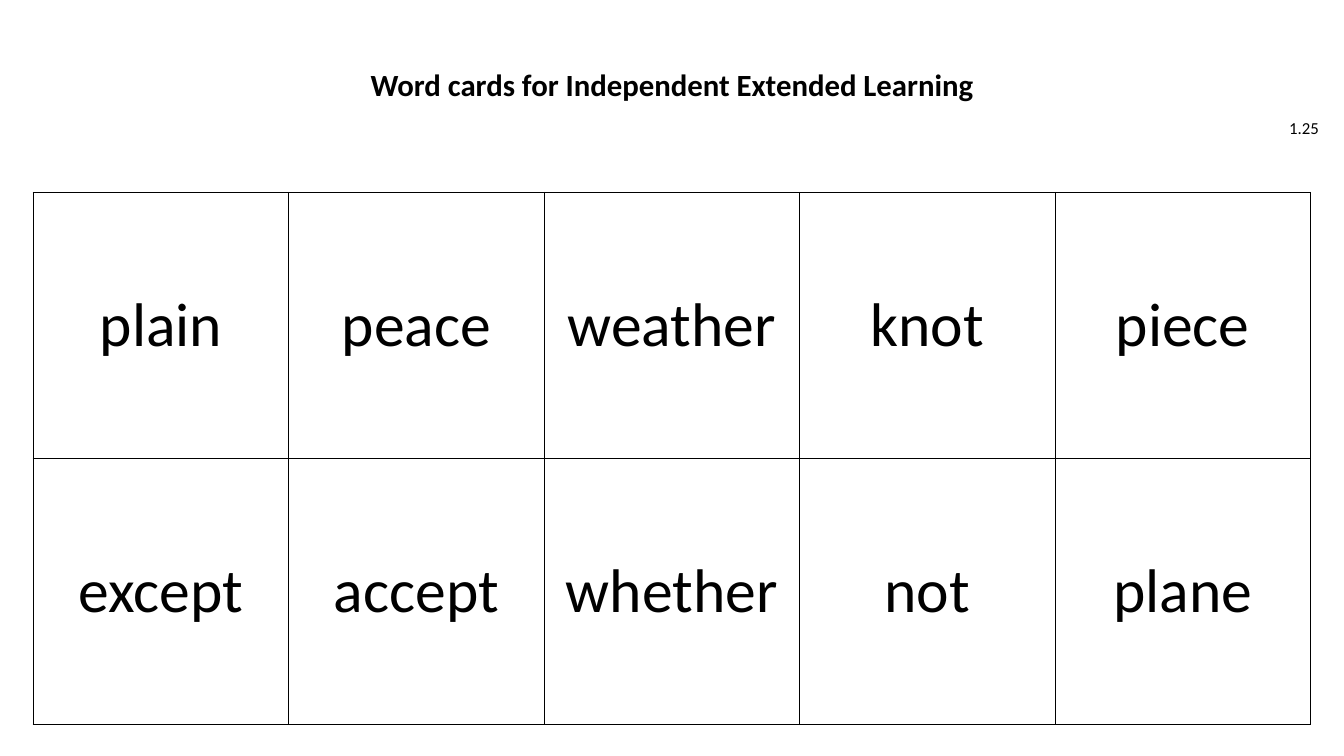
"""Build a slide of word cards for independent extended learning."""
import dataclasses

import lxml.etree
import pptx
import pptx.dml.color
import pptx.enum.text
import pptx.oxml.ns
import pptx.util

Inches = pptx.util.Inches
ALIGN = pptx.enum.text.PP_ALIGN
ANCHOR = pptx.enum.text.MSO_ANCHOR


@dataclasses.dataclass(frozen=True)
class Theme:
    font: str = "Calibri"
    ink: str = "000000"
    paper: str = "FFFFFF"
    title: int = 22
    label: int = 12
    card: int = 44
    rule: int = 1


class Deck:
    def __init__(self, theme):
        self.theme = theme
        self.show = pptx.Presentation()
        self.show.slide_width = Inches(13.33)
        self.show.slide_height = Inches(7.5)
        self.slide = self.show.slides.add_slide(self.show.slide_layouts[5])

    def color(self, name):
        return pptx.dml.color.RGBColor.from_string(name)

    def letter(self, frame, text, size, align, bold=False):
        frame.text = text
        para = frame.paragraphs[0]
        para.alignment = align
        form = {"name": self.theme.font, "size": pptx.util.Pt(size), "bold": bold}
        font = para.runs[0].font
        for key, value in form.items():
            setattr(font, key, value)
        font.color.rgb = self.color(self.theme.ink)
        return para

    def place(self, shape, box):
        for key, value in zip(("left", "top", "width", "height"), box):
            setattr(shape, key, Inches(value))

    def setup(self, frame, anchor):
        form = {
            "word_wrap": True,
            "auto_size": pptx.enum.text.MSO_AUTO_SIZE.NONE,
            "vertical_anchor": anchor,
        }
        for key, value in form.items():
            setattr(frame, key, value)

    def title(self, text, box):
        shape = self.slide.shapes.title
        self.place(shape, box)
        self.setup(shape.text_frame, ANCHOR.TOP)
        para = self.letter(shape.text_frame, text, self.theme.title, ALIGN.CENTER, True)
        para.line_spacing = 0.9

    def label(self, text, box):
        shape = self.slide.shapes.add_textbox(*map(Inches, box))
        self.setup(shape.text_frame, ANCHOR.MIDDLE)
        self.letter(shape.text_frame, text, self.theme.label, ALIGN.RIGHT)

    def border(self, cell):
        qn = pptx.oxml.ns.qn
        props = cell._tc.get_or_add_tcPr()
        width = str(pptx.util.Pt(self.theme.rule))
        for side in ("lnL", "lnR", "lnT", "lnB"):
            line = lxml.etree.SubElement(props, qn(f"a:{side}"), w=width)
            fill = lxml.etree.SubElement(line, qn("a:solidFill"))
            lxml.etree.SubElement(fill, qn("a:srgbClr"), val=self.theme.ink)

    def cards(self, rows, box):
        frame = self.slide.shapes.add_table(len(rows), len(rows[0]), *map(Inches, box))
        table = frame.table
        table.first_row = table.horz_banding = False
        for row, words in enumerate(rows):
            for col, word in enumerate(words):
                cell = table.cell(row, col)
                self.border(cell)
                cell.fill.solid()
                cell.fill.fore_color.rgb = self.color(self.theme.paper)
                cell.vertical_anchor = ANCHOR.MIDDLE
                self.letter(cell.text_frame, word, self.theme.card, ALIGN.CENTER)


def main():
    deck = Deck(Theme())
    deck.label("1.25", (12.55, 1.07, 0.63, 0.4))
    deck.title("Word cards for Independent Extended Learning", (2.31, 0.64, 8.71, 0.35))
    words = [
        ["plain", "peace", "weather", "knot", "piece"],
        ["except", "accept", "whether", "not", "plane"],
    ]
    deck.cards(words, (0.33, 1.91, 12.67, 5.28))
    deck.show.save("out.pptx")


if __name__ == "__main__":
    main()
